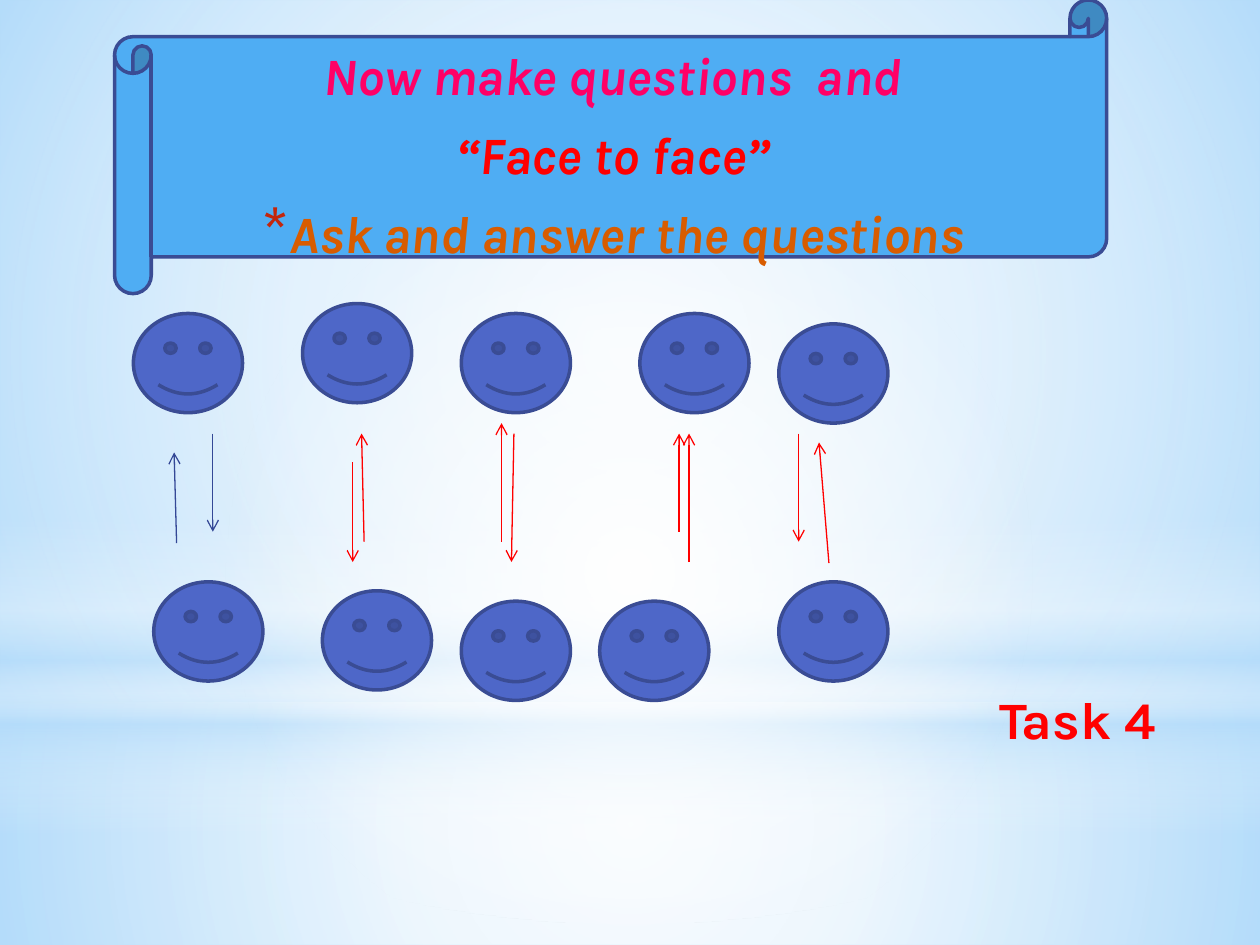
from pptx import Presentation
from pptx.dml.color import RGBColor
from pptx.enum.shapes import MSO_CONNECTOR, MSO_SHAPE
from pptx.enum.text import MSO_ANCHOR, MSO_AUTO_SIZE, PP_ALIGN
from pptx.oxml import parse_xml
from pptx.oxml.ns import nsdecls, qn
from pptx.util import Cm, Pt

RECT, OVAL = MSO_SHAPE.RECTANGLE, MSO_SHAPE.OVAL
SCROLL, SMILE = MSO_SHAPE.HORIZONTAL_SCROLL, MSO_SHAPE.SMILEY_FACE
STRAIGHT = MSO_CONNECTOR.STRAIGHT
CENTER, LEFT = PP_ALIGN.CENTER, PP_ALIGN.LEFT
TOP, FIXED = MSO_ANCHOR.TOP, MSO_AUTO_SIZE.NONE

WHITE = RGBColor(0xFF, 0xFF, 0xFF)
SKY = RGBColor(0xB4, 0xDC, 0xFA)
BLUE = RGBColor(0x4F, 0xAD, 0xF3)
INDIGO = RGBColor(0x4E, 0x67, 0xC8)
EDGE = RGBColor(0x3A, 0x4C, 0x94)
NAVY = RGBColor(0x34, 0x48, 0x96)
RED = RGBColor(0xFF, 0x00, 0x00)
PINK = RGBColor(0xFF, 0x00, 0x66)
ORANGE = RGBColor(0xD8, 0x5C, 0x00)
RUST = RGBColor(0xC3, 0x26, 0x0C)

CIRCLE = ('<a:path path="circle"><a:fillToRect l="50000" t="50000" '
          'r="50000" b="50000"/></a:path>')
DOWN = '<a:lin ang="5400000" scaled="0"/>'

GLOWS = [
    (RECT, (0, 14.17, 25.4, 4.88), CIRCLE,
     [(0, WHITE, 91), (37, WHITE, 76), (100, SKY, 79)]),
    (RECT, (0, 0, 25.4, 14.17), CIRCLE,
     [(0, WHITE, 89), (48, WHITE, 62), (100, SKY, 79)]),
    (RECT, (0, 10.46, 25.4, 6.35), DOWN,
     [(0, WHITE, 0), (29, WHITE, 30), (45, SKY, 40),
      (55, WHITE, 26), (65, SKY, 60), (100, WHITE, 0)]),
    (OVAL, (0, 4.45, 25.4, 14.17), CIRCLE,
     [(0, WHITE, 100), (56, WHITE, 0)]),
]
FACES = [
    (0, 0.2), (3.41, 0), (6.61, 0.2), (10.21, 0.2), (13.01, 0.41),
    (0.41, 5.61), (3.81, 5.79), (6.61, 6), (9.4, 6), (13.01, 5.61),
]
ARROWS = [
    (0.87, 4.83, 0.82, 3, NAVY), (1.6, 2.62, 1.6, 4.6, NAVY),
    (11, 4.6, 11, 2.62, RED), (4.65, 4.8, 4.6, 2.62, RED),
    (7.67, 2.62, 7.62, 5.21, RED), (13.41, 2.62, 13.41, 4.8, RED),
    (7.42, 4.8, 7.42, 2.41, RED), (4.42, 3.2, 4.42, 5.21, RED),
    (14.02, 5.23, 13.82, 2.8, RED), (11.2, 5.21, 11.2, 2.62, RED),
]


def write(para, text, color, size=30, italic=False, align=LEFT):
    """Put one formatted run in a paragraph."""
    para.alignment = align
    run = para.add_run()
    run.text = text
    font = run.font
    font.name, font.size, font.bold, font.italic = "Karla", Pt(size), True, italic
    font.color.rgb = color


def add_form(slide, kind, box, fill=None):
    """Add a preset shape, filled and outlined when a colour is given."""
    form = slide.shapes.add_shape(kind, *map(Cm, box))
    form.shadow.inherit = False
    if fill is None:
        form.fill.background()
        form.line.fill.background()
    else:
        form.fill.solid()
        form.fill.fore_color.rgb = fill
        form.line.color.rgb = EDGE
        form.line.width = Pt(2)
    return form


def add_glow(slide, kind, box, course, stops):
    """Add a backdrop shape with a see-through gradient."""
    props = add_form(slide, kind, box).element.spPr
    marks = "".join(
        f'<a:gs pos="{pos * 1000}"><a:srgbClr val="{color}">'
        f'<a:alpha val="{alpha * 1000}"/></a:srgbClr></a:gs>'
        for pos, color, alpha in stops)
    grad = parse_xml(f'<a:gradFill {nsdecls("a")} rotWithShape="1">'
                     f'<a:gsLst>{marks}</a:gsLst>{course}</a:gradFill>')
    props.replace(props.find(qn("a:noFill")), grad)


def add_arrow(slide, left, top, ends, color):
    """Add a thin arrow between two points of a region."""
    x1, y1, x2, y2 = ends
    line = slide.shapes.add_connector(
        STRAIGHT, Cm(left + x1), Cm(top + y1), Cm(left + x2), Cm(top + y2))
    line.line.color.rgb = color
    line.line.width = Pt(0.75)
    line.line.fill.fore_color.rgb = color
    props = line.element.spPr
    props.find(qn("a:ln")).append(
        parse_xml(f'<a:tailEnd {nsdecls("a")} type="arrow"/>'))
    props.append(parse_xml(f'<a:effectLst {nsdecls("a")}/>'))


def set_bullet(para, mark=None):
    """Set the hanging indent and the bullet of a paragraph."""
    props = para._p.get_or_add_pPr()
    props.set("marL", str(Cm(0.64)))
    props.set("indent", str(-Cm(0.51)))
    parts = ["<a:buNone {}/>"]
    if mark:
        parts = [f'<a:buClr {{}}><a:srgbClr val="{RUST}"/></a:buClr>',
                 '<a:buSzPct {} val="130000"/>',
                 '<a:buFont {} typeface="Karla"/>',
                 f'<a:buChar {{}} char="{mark}"/>']
    for part in parts:
        props.append(parse_xml(part.format(nsdecls("a"))))


def add_banner(slide, left, top, width, height):
    """Place the scroll and the instructions on it."""
    add_form(slide, SCROLL, (left, top, width, height), BLUE)
    body = slide.placeholders[1]
    slide.shapes.element.append(body.element)
    body.left, body.top = Cm(left + 0.79), Cm(top + 0.74)
    body.width, body.height = Cm(width - 1.61), Cm(height - 0.71)
    frame = body.text_frame
    frame.word_wrap, frame.auto_size = True, FIXED
    frame.vertical_anchor = TOP
    rows = [("Now make questions  and", PINK, None),
            ("“Face to face”", RED, None),
            ("Ask and answer the questions", ORANGE, "*")]
    for num, (text, color, mark) in enumerate(rows):
        para = frame.add_paragraph() if num else frame.paragraphs[0]
        write(para, text, color, italic=True, align=CENTER)
        para.space_before, para.space_after = Pt(6), Pt(3)
        set_bullet(para, mark)


def add_pairs(slide, left, top):
    """Place the facing rows of faces and the arrows between them."""
    for *ends, color in ARROWS:
        add_arrow(slide, left, top, ends, color)
    for x, y in FACES:
        add_form(slide, SMILE, (left + x, top + y, 2.2, 2), INDIGO)


def add_label(slide, *box):
    """Place the task label."""
    frame = slide.shapes.add_textbox(*map(Cm, box)).text_frame
    frame.word_wrap = True
    write(frame.paragraphs[0], "Task 4", RED)


def main():
    """Build and save the slide."""
    deck = Presentation()
    deck.slide_width, deck.slide_height = Cm(25.4), Cm(19.05)
    slide = deck.slides.add_slide(deck.slide_layouts[1])
    title = slide.shapes.title.element
    title.getparent().remove(title)
    back = slide.background.fill
    back.solid()
    back.fore_color.rgb = SKY
    for glow in GLOWS:
        add_glow(slide, *glow)
    add_banner(slide, 2.31, 0, 20, 5.92)
    add_pairs(slide, 2.69, 6.12)
    add_label(slide, 19.89, 13.72, 3.81, 1.55)
    deck.save("out.pptx")


if __name__ == "__main__":
    main()
